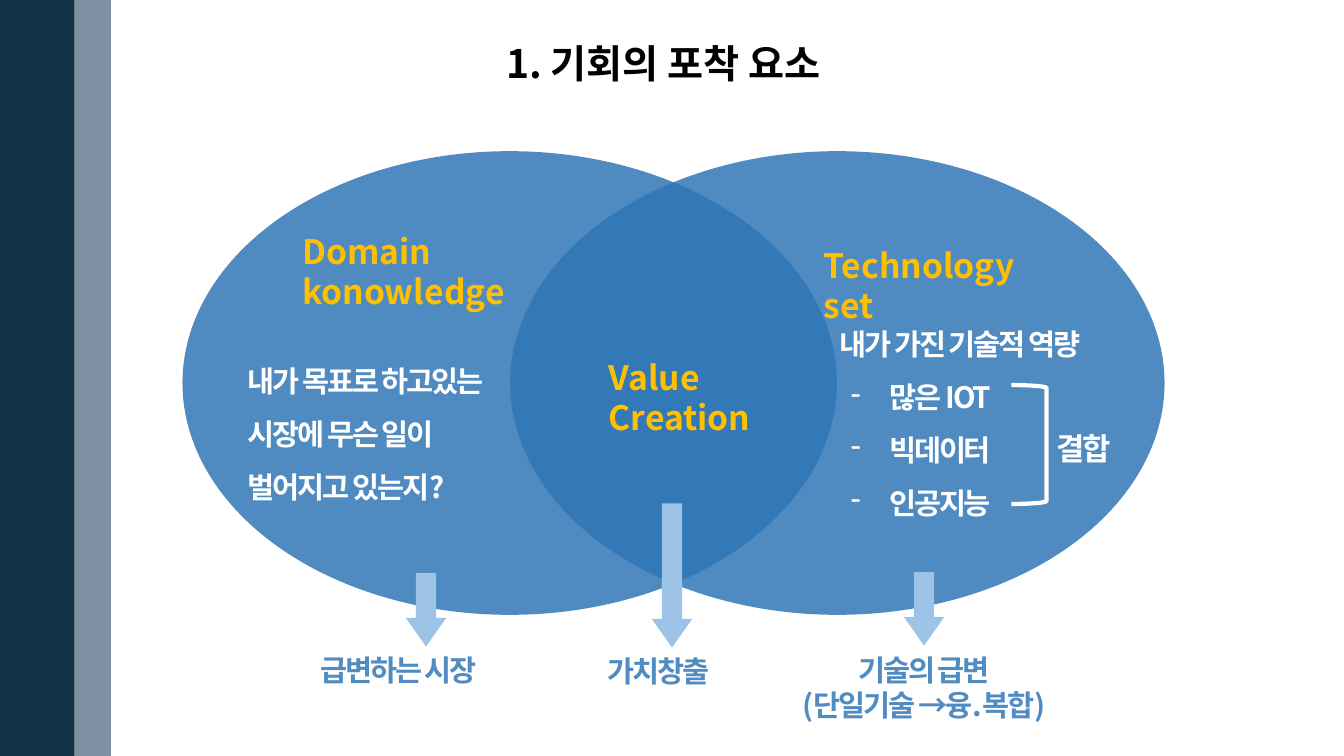
from lxml.etree import SubElement
from pptx import Presentation
from pptx.dml.color import RGBColor
from pptx.enum.shapes import MSO_SHAPE
from pptx.enum.text import MSO_ANCHOR, MSO_AUTO_SIZE, PP_ALIGN
from pptx.oxml.ns import qn
from pptx.util import Pt

PX = 9144  # 100 px to the inch
FACE = "Noto Sans CJK KR"
BLACK = RGBColor(0x00, 0x00, 0x00)
WHITE = RGBColor(0xFF, 0xFF, 0xFF)
GOLD = RGBColor(0xFF, 0xC0, 0x00)
NAVY = RGBColor(0x11, 0x32, 0x45)
GRAY = RGBColor(0x7E, 0x91, 0xA2)
BLUE = RGBColor(0x2E, 0x75, 0xB6)
PALE = RGBColor(0x9D, 0xC3, 0xE6)
STEEL = RGBColor(0x50, 0x8B, 0xC2)

# Text styles: size, colour, letter spacing, line spacing
TITLE = (28, BLACK, 0, None)
HEAD = (24, GOLD, 0, None)
BODY = (21, WHITE, -150, 1.5)
JOIN = (22, WHITE, -150, 1.5)
NOTE = (21, STEEL, -150, None)


def scale(*nums):
    return [n * PX for n in nums]


def put(obj, form):
    for name, value in form.items():
        setattr(obj, name, value)


def write(shape, lines, style, align=PP_ALIGN.LEFT, dash=False):
    size, color, gap, pitch = style
    frame = shape.text_frame
    put(frame, {"word_wrap": True, "vertical_anchor": MSO_ANCHOR.TOP,
                "auto_size": MSO_AUTO_SIZE.SHAPE_TO_FIT_TEXT})
    for i, line in enumerate(lines):
        para = frame.add_paragraph() if i else frame.paragraphs[0]
        put(para, {"alignment": align, "line_spacing": pitch})
        run = para.add_run()
        run.text = line
        put(run.font, {"size": Pt(size), "bold": True, "name": FACE})
        run.font.color.rgb = color
        props = run.font._element
        SubElement(props, qn("a:ea"), typeface=FACE)
        if gap:
            props.set("spc", str(gap))
        if dash:
            props = para._p.get_or_add_pPr()
            props.set("marL", str(38 * PX))
            props.set("indent", str(-38 * PX))
            SubElement(props, qn("a:buChar"), char="-")


def label(slide, box, lines, style, **form):
    write(slide.shapes.add_textbox(*scale(*box)), lines, style, **form)


def block(slide, kind, box, fill, alpha=None):
    shape = slide.shapes.add_shape(kind, *scale(*box))
    shape.shadow.inherit = False
    shape.line.fill.background()
    shape.fill.solid()
    shape.fill.fore_color.rgb = fill
    if alpha:
        tint = shape.fill._xPr.find(qn("a:solidFill"))[0]
        SubElement(tint, qn("a:alpha"), val=str(alpha * 1000))
    return shape


def arrow(slide, left, top, length):
    shape = block(slide, MSO_SHAPE.RIGHT_ARROW, (left, top, length, 40), PALE)
    shape.rotation = 90
    shape.adjustments[1] = 0.71


def bracket(slide, box):
    shape = slide.shapes.add_shape(MSO_SHAPE.RIGHT_BRACKET, *scale(*box))
    shape.shadow.inherit = False
    shape.fill.background()
    shape.line.color.rgb = WHITE
    shape.line.width = Pt(3)


def main():
    deck = Presentation()
    put(deck, {"slide_width": 1333 * PX, "slide_height": 750 * PX})
    slide = deck.slides.add_slide(deck.slide_layouts[5])

    # Side bars and title
    block(slide, MSO_SHAPE.RECTANGLE, (0, 0, 74, 750), NAVY)
    block(slide, MSO_SHAPE.RECTANGLE, (74, 0, 36, 750), GRAY)
    title = slide.shapes.title
    put(title, dict(zip(("left", "top", "width", "height"),
                        scale(492, 34, 367, 57))))
    write(title, ["1. 기회의 포착 요소"], TITLE)

    # Left circle: domain
    block(slide, MSO_SHAPE.OVAL, (181, 150, 649, 460), BLUE, 84)
    label(slide, (290, 224, 247, 91), ["Domain", "konowledge"], HEAD)
    label(slide, (236, 338, 291, 162),
          ["내가 목표로 하고있는 시장에 무슨 일이", "벌어지고 있는지?"], BODY)

    # Right circle: technology, with the overlap
    block(slide, MSO_SHAPE.OVAL, (506, 150, 649, 460), BLUE, 84)
    label(slide, (594, 349, 165, 91), ["Value Creation"], HEAD)
    label(slide, (807, 238, 261, 50), ["Technology set"], HEAD)
    label(slide, (823, 301, 318, 56), ["내가 가진 기술적 역량"], BODY)
    label(slide, (834, 354, 318, 162), ["많은 IOT", "빅데이터", "인공지능"],
          BODY, dash=True)
    bracket(slide, (1003, 382, 35, 118))
    label(slide, (1038, 403, 98, 61), ["결합"], JOIN)

    # Arrows and outcomes
    for spot in ((386, 585, 73), (595, 551, 143), (880, 584, 73)):
        arrow(slide, *spot)
    label(slide, (308, 642, 218, 45), ["급변하는 시장"], NOTE)
    label(slide, (593, 643, 147, 45), ["가치창출"], NOTE)
    label(slide, (749, 642, 335, 116), ["기술의 급변", "(단일기술 →융.복합)"],
          NOTE, align=PP_ALIGN.CENTER)

    deck.save("out.pptx")


if __name__ == "__main__":
    main()
